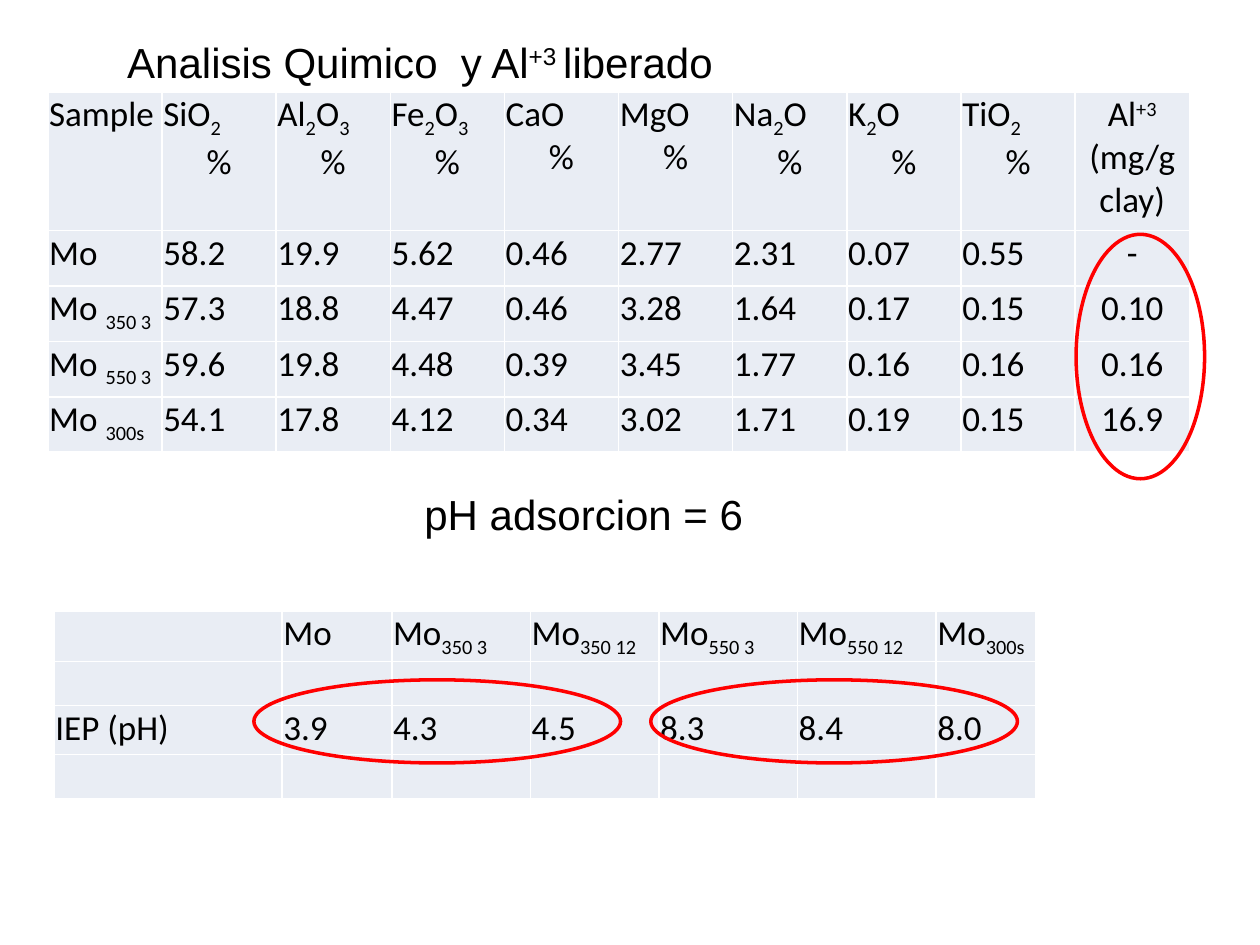
from lxml import etree
from pptx import Presentation
from pptx import util as u
from pptx.dml.color import RGBColor
from pptx.enum import shapes, text
from pptx.oxml.ns import qn

BASELINES = {"_": "-25000", "^": "30000"}
CENTER, LEFT = text.PP_ALIGN.CENTER, text.PP_ALIGN.LEFT

OXIDES = ["SiO|_2", "Al|_2|O|_3", "Fe|_2|O|_3", "CaO", "MgO",
          "Na|_2|O", "K|_2|O", "TiO|_2"]
ANALYSIS = [
    ["Sample"] + [f"{oxide}\n%" for oxide in OXIDES] + ["Al|^+3\n(mg/g clay)"],
    ["Mo", "58.2", "19.9", "5.62", "0.46", "2.77", "2.31", "0.07", "0.55", "-"],
    ["Mo |_350 3", "57.3", "18.8", "4.47", "0.46", "3.28", "1.64", "0.17", "0.15", "0.10"],
    ["Mo |_550 3", "59.6", "19.8", "4.48", "0.39", "3.45", "1.77", "0.16", "0.16", "0.16"],
    ["Mo |_300s", "54.1", "17.8", "4.12", "0.34", "3.02", "1.71", "0.19", "0.15", "16.9"],
]
IEP = [
    ["", "Mo", "Mo|_350 3", "Mo|_350 12", "Mo|_550 3", "Mo|_550 12", "Mo|_300s"],
    [""] * 7,
    ["IEP (pH)", "3.9", "4.3", "4.5", "8.3", "8.4", "8.0"],
    [""] * 7,
]


def rgb(hex_color):
    return RGBColor.from_string(hex_color)


def write(p, markup, size, font):
    """Fill a paragraph; | parts runs, a leading _ lowers and ^ raises one."""
    for part in markup.split("|"):
        r = p.add_run()
        r.text = part.lstrip("_^")
        r.font.size, r.font.name = u.Pt(size), font
        r.font.color.rgb = rgb("000000")
        if part[0] in BASELINES:
            r._r.get_or_add_rPr().set("baseline", BASELINES[part[0]])


def add_borders(cell, color):
    tc_pr = cell._tc.get_or_add_tcPr()
    for side in ("lnL", "lnR", "lnT", "lnB"):
        ln = etree.SubElement(tc_pr, qn(f"a:{side}"), w=str(u.Pt(1)))
        fill = etree.SubElement(ln, qn("a:solidFill"))
        etree.SubElement(fill, qn("a:srgbClr"), val=color)


def fill_cell(cell, content, centered):
    cell.margin_left = cell.margin_right = u.Inches(0.01)
    cell.margin_top = cell.margin_bottom = u.Inches(0.01)
    add_borders(cell, "FFFFFF")
    cell.fill.solid()
    cell.fill.fore_color.rgb = rgb("E9EDF4")
    tf = cell.text_frame
    for i, line in enumerate(content.splitlines()):
        p = tf.add_paragraph() if i else tf.paragraphs[0]
        p.alignment = CENTER if centered or i else LEFT
        write(p, line, 20, "Calibri")


def add_table(s, rows, left, top, widths, heights, centered_col=None):
    frame = s.shapes.add_table(len(rows), len(widths), u.Inches(left), u.Inches(top),
                               u.Inches(sum(widths)), u.Inches(sum(heights)))
    table = frame.table
    table.first_row = table.horz_banding = False
    for col, width in zip(table.columns, widths):
        col.width = u.Inches(width)
    for row, height in zip(table.rows, heights):
        row.height = u.Inches(height)
    for i, values in enumerate(rows):
        for j, value in enumerate(values):
            fill_cell(table.cell(i, j), value, j == centered_col)


def set_text(sp, markup, wrap):
    tf = sp.text_frame
    tf.word_wrap = wrap
    tf.auto_size = text.MSO_AUTO_SIZE.NONE
    tf.vertical_anchor = text.MSO_ANCHOR.TOP
    tf.paragraphs[0].alignment = LEFT
    write(tf.paragraphs[0], markup, 24, "Arial")


def add_ring(s, left, top, width, height, rotation=0):
    sp = s.shapes.add_shape(shapes.MSO_SHAPE.OVAL, u.Inches(left), u.Inches(top),
                            u.Inches(width), u.Inches(height))
    sp.rotation = rotation
    sp.shadow.inherit = False
    sp.fill.background()
    sp.line.color.rgb = rgb("FF0000")
    sp.line.width = u.Pt(2)


def main():
    prs = Presentation()
    prs.slide_width, prs.slide_height = u.Inches(10), u.Inches(7.5)
    s = prs.slides.add_slide(prs.slide_layouts[5])

    # Title
    title = s.shapes.title
    title.left, title.top = u.Inches(0.91), u.Inches(0.24)
    title.width, title.height = u.Inches(8.43), u.Inches(0.91)
    set_text(title, "Analisis Quimico  y Al|^+3 |liberado", True)

    # Chemical analysis
    add_table(s, ANALYSIS, 0.38, 0.73, [0.906] * 10, [1.1] + [0.44] * 4, centered_col=9)

    # Adsorption pH
    note = s.shapes.add_textbox(u.Inches(3.27), u.Inches(3.83), u.Inches(2.76), u.Inches(0.91))
    set_text(note, "pH adsorcion = 6", False)

    # Isoelectric points
    add_table(s, IEP, 0.43, 4.85, [1.81, 0.87, 1.1, 1.02, 1.1, 1.1, 0.79],
              [0.4, 0.35, 0.39, 0.35])

    # Red rings around released aluminium and both pH groups
    add_ring(s, 8.54, 1.86, 1.02, 1.94)
    for left in (3.14, 6.29):
        add_ring(s, left, 4.27, 0.66, 2.91, rotation=270)

    prs.save("out.pptx")


if __name__ == "__main__":
    main()
